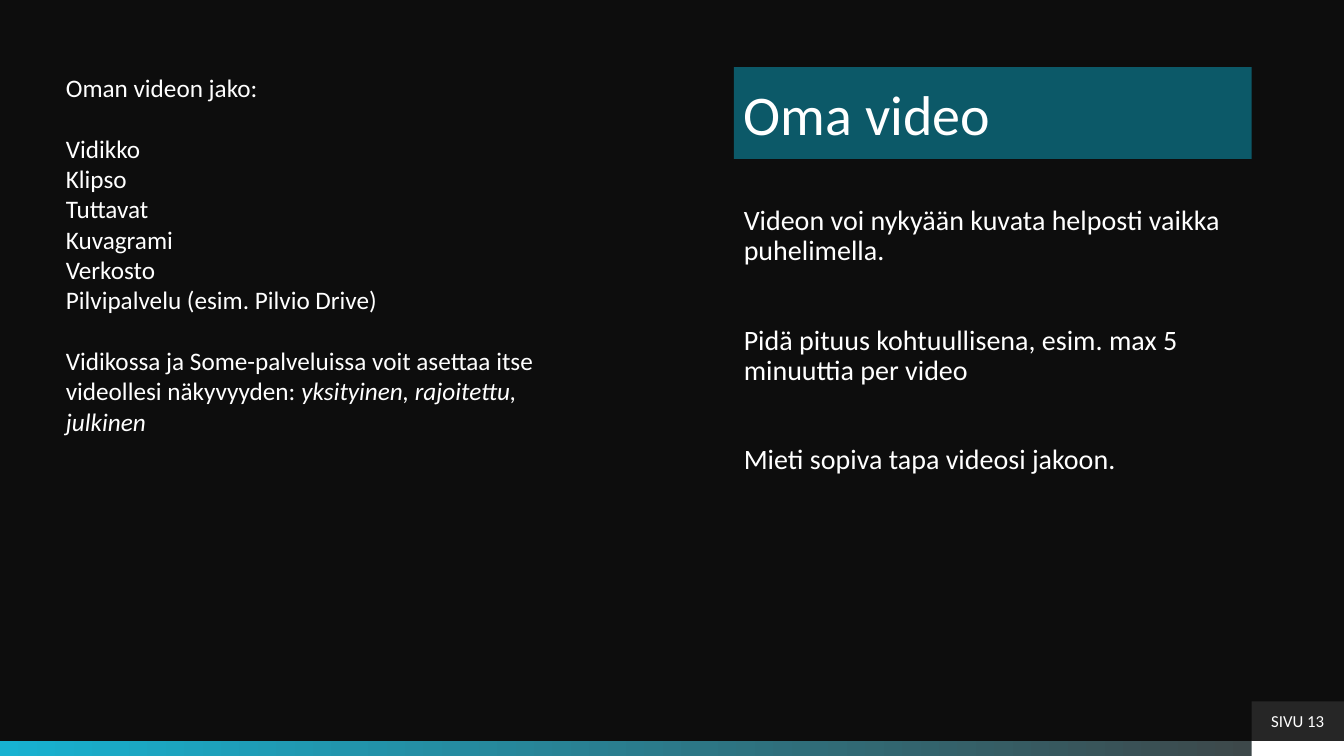
import pptx
import pptx.dml.color
import pptx.enum.shapes
import pptx.enum.text
import pptx.util

COLORS = {
    "background": "0D0D0D",
    "title": "0C5968",
    "accent": "17B2D1",
    "gray": "404040",
    "page": "262626",
    "white": "FFFFFF",
}
FONT = "Calibri"
WIDTH, HEIGHT = 960, 540
RIGHT_EDGE = 894
BAR_TOP = 529.2
TOP = 48
COLUMN_LEFT, COLUMN_WIDTH = 524.2, 369.8


def color(name):
    return pptx.dml.color.RGBColor.from_string(COLORS[name])


class SlideBuilder:
    def __init__(self, presentation):
        self.slide = presentation.slides.add_slide(presentation.slide_layouts[5])
        self.slide.background.fill.solid()
        self.slide.background.fill.fore_color.rgb = color("background")

    def place(self, shape, left, top, width, height):
        shape.left, shape.top, shape.width, shape.height = map(
            pptx.util.Pt, (left, top, width, height)
        )

    def add_text(self, shape, paragraphs, size, anchor="TOP", align="LEFT", spacing=1.0):
        frame = shape.text_frame
        frame.word_wrap = True
        frame.auto_size = pptx.enum.text.MSO_AUTO_SIZE.NONE
        frame.vertical_anchor = getattr(pptx.enum.text.MSO_ANCHOR, anchor)
        for index, (space_before, runs) in enumerate(paragraphs):
            paragraph = frame.add_paragraph() if index else frame.paragraphs[0]
            paragraph.alignment = getattr(pptx.enum.text.PP_ALIGN, align)
            paragraph.line_spacing = spacing
            paragraph.space_before = pptx.util.Pt(space_before)
            for text, italic in runs:
                run = paragraph.add_run()
                run.text = text
                run.font.name = FONT
                run.font.size = pptx.util.Pt(size)
                run.font.italic = italic
                run.font.color.rgb = color("white")

    def title(self, text, left, top, width, height):
        shape = self.slide.shapes.title
        self.place(shape, left, top, width, height)
        shape.fill.solid()
        shape.fill.fore_color.rgb = color("title")
        self.add_text(shape, [(0, [(text, False)])], 40, anchor="MIDDLE")

    def rectangle(self, left, top, width, height, fill, gradient_end=None):
        shape = self.slide.shapes.add_shape(
            pptx.enum.shapes.MSO_SHAPE.RECTANGLE,
            *map(pptx.util.Pt, (left, top, width, height)),
        )
        shape.shadow.inherit = False
        shape.line.fill.background()
        if gradient_end:
            shape.fill.gradient()
            shape.fill.gradient_angle = 0
            for stop, name in zip(shape.fill.gradient_stops, (fill, gradient_end)):
                stop.color.rgb = color(name)
        else:
            shape.fill.solid()
            shape.fill.fore_color.rgb = color(fill)
        return shape

    def text_box(self, left, top, width, height, paragraphs, size, spacing=1.0):
        shape = self.slide.shapes.add_textbox(
            *map(pptx.util.Pt, (left, top, width, height))
        )
        self.add_text(shape, paragraphs, size, spacing=spacing)


def main():
    presentation = pptx.Presentation()
    presentation.slide_width = pptx.util.Pt(WIDTH)
    presentation.slide_height = pptx.util.Pt(HEIGHT)
    builder = SlideBuilder(presentation)

    bar_height = HEIGHT - BAR_TOP
    page_width = WIDTH - RIGHT_EDGE
    builder.rectangle(0, BAR_TOP, WIDTH, bar_height, "accent", "gray")
    builder.rectangle(RIGHT_EDGE, BAR_TOP, page_width, bar_height, "white")
    page = builder.rectangle(RIGHT_EDGE, 501, page_width, BAR_TOP - 501, "page")
    builder.add_text(page, [(0, [("SIVU 13", False)])], 12, "MIDDLE", "CENTER")

    builder.title("Oma video", COLUMN_LEFT, TOP, COLUMN_WIDTH, 65.5)
    advice = [
        "Videon voi nykyään kuvata helposti vaikka puhelimella.",
        "Pidä pituus kohtuullisena, esim. max 5 minuuttia per video",
        "Mieti sopiva tapa videosi jakoon.",
    ]
    builder.text_box(
        COLUMN_LEFT, 144, COLUMN_WIDTH, 342.7,
        [(42 if index else 0, [(text, False)]) for index, text in enumerate(advice)],
        20, spacing=0.9,
    )

    services = [
        "Vidikko", "Klipso", "Tuttavat", "Kuvagrami", "Verkosto",
        "Pilvipalvelu (esim. Pilvio Drive)",
    ]
    sharing = [(0, [("Oman videon jako:", False)])]
    sharing += [
        (0 if index else 22, [(service, False)])
        for index, service in enumerate(services)
    ]
    sharing.append((22, [
        ("Vidikossa ja Some-palveluissa voit asettaa itse videollesi näkyvyyden: ", False),
        ("yksityinen, rajoitettu, julkinen", True),
    ]))
    builder.text_box(40, TOP, 357, 291, sharing, 18)

    presentation.save("out.pptx")


if __name__ == "__main__":
    main()
